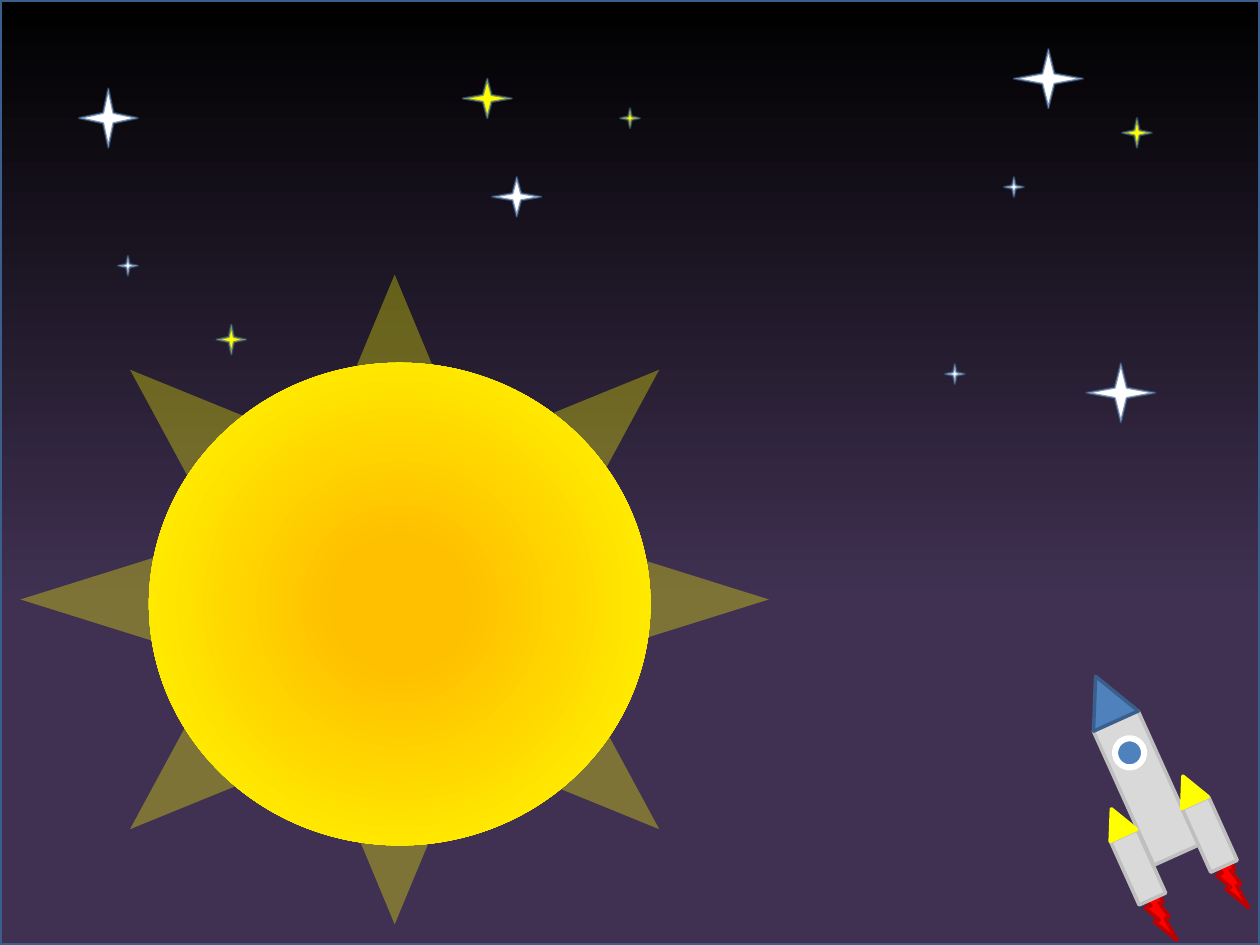
from lxml import etree
from pptx import Presentation
from pptx.dml.color import RGBColor
from pptx.enum import shapes
from pptx.oxml import ns
from pptx.util import Pt

MSO = shapes.MSO_SHAPE
NIGHT = RGBColor(0x40, 0x31, 0x52)
BLACK = RGBColor(0, 0, 0)
WHITE = RGBColor(0xFF, 0xFF, 0xFF)
YELLOW = RGBColor(0xFF, 0xFF, 0)
ORANGE = RGBColor(0xFF, 0xC0, 0)
RED = RGBColor(0xFF, 0, 0)
DARK_RED = RGBColor(0xC0, 0, 0)
BLUE = RGBColor(0x4F, 0x81, 0xBD)
DARK_BLUE = RGBColor(0x3A, 0x5F, 0x8C)
HULL = RGBColor(0xD9, 0xD9, 0xD9)
HULL_EDGE = RGBColor(0xBF, 0xBF, 0xBF)
TILT = 335.7


def add_shape(parent, kind, box, fill=None, line=None, width=2, rotation=0):
    sp = parent.add_shape(kind, *[Pt(v) for v in box])
    sp.shadow.inherit = False
    sp.rotation = rotation
    if fill is None:
        sp.fill.background()
    else:
        sp.fill.solid()
        sp.fill.fore_color.rgb = fill
    if line is None:
        sp.line.fill.background()
    else:
        sp.line.color.rgb = line
        sp.line.width = Pt(width)
    return sp


def set_alpha(element, percent):
    for color in element.iter(ns.qn("a:srgbClr")):
        etree.SubElement(color, ns.qn("a:alpha"), val=str(percent * 1000))


def set_gradient(sp, stops, direction):
    grad = etree.Element(ns.qn("a:gradFill"), rotWithShape="1")
    stop_list = etree.SubElement(grad, ns.qn("a:gsLst"))
    for position, color in stops:
        stop = etree.SubElement(stop_list, ns.qn("a:gs"), pos=str(position * 1000))
        etree.SubElement(stop, ns.qn("a:srgbClr"), val=str(color))
    grad.append(direction)
    spPr = sp._element.spPr
    spPr.replace(spPr.find(ns.qn("a:noFill")), grad)


def add_sky(s, x, y, w, h):
    sky = add_shape(s.shapes, MSO.RECTANGLE, (x, y, w, h), line=DARK_BLUE)
    upward = etree.Element(ns.qn("a:lin"), ang=str(270 * 60000), scaled="0")
    set_gradient(sky, [(0, NIGHT), (36, NIGHT), (100, BLACK)], upward)


def add_rocket(s, x, y):
    rocket = s.shapes.add_group_shape().shapes

    def part(kind, dx, dy, w, h, fill, line, width=2, rotation=TILT):
        add_shape(rocket, kind, (x + dx, y + dy, w, h), fill, line, width, rotation)

    def pair(kind, dx, dy, *style, **options):
        for shift_x, shift_y in ((0, 0), (40.9, -18.7)):
            part(kind, dx + shift_x, dy + shift_y, *style, **options)

    pair(MSO.LIGHTNING_BOLT, 30.2, 121.7, 26.6, 28.8, RED, DARK_RED, rotation=7.6)
    part(MSO.RECTANGLE, 23, 23, 28.1, 84.2, HULL, HULL_EDGE)
    pair(MSO.RECTANGLE, 24.3, 90.7, 16.6, 39.6, HULL, HULL_EDGE)
    pair(MSO.ISOSCELES_TRIANGLE, 12.4, 76.3, 16.6, 16.6, YELLOW, YELLOW)
    part(MSO.OVAL, 19.4, 36.7, 16.6, 16.6, BLUE, WHITE, 3.5)
    part(MSO.ISOSCELES_TRIANGLE, 0, 0, 28.1, 28.1, BLUE, DARK_BLUE)


def add_sun(s, x, y, w, h):
    sun = s.shapes.add_group_shape().shapes
    rays = add_shape(sun, MSO.SUN, (x, y, w, h), YELLOW)
    rays.adjustments[0] = 0.248
    set_alpha(rays._element.spPr, 32)
    disc = add_shape(sun, MSO.OVAL, (x + 73.4, y + 50.4, 286.6, 275.8))
    outward = etree.Element(ns.qn("a:path"), {"path": "circle"})
    etree.SubElement(outward, ns.qn("a:fillToRect"), dict.fromkeys("ltrb", "50000"))
    set_gradient(disc, [(18, ORANGE), (100, YELLOW), (100, YELLOW)], outward)


def add_stars(s, x, y):
    tiny, small, wide = (11.25, 11.25), (16.9, 16.9), (28.1, 22.5)
    big, large = (33.75, 33.75), (39.4, 33.75)
    stars = [
        (45, 50.6, big, WHITE),
        (123.75, 185.6, small, YELLOW),
        (67.5, 146.25, tiny, WHITE),
        (281.25, 101.25, wide, WHITE),
        (579.4, 28.1, large, WHITE),
        (573.75, 101.25, tiny, WHITE),
        (540, 208.1, tiny, WHITE),
        (264.4, 45, wide, YELLOW),
        (354.4, 61.9, tiny, YELLOW),
        (641.25, 67.5, small, YELLOW),
        (620.8, 207.6, large, WHITE),
    ]
    for dx, dy, size, color in stars:
        star = add_shape(s.shapes, MSO.STAR_4_POINT, (x + dx, y + dy, *size),
                         color, DARK_BLUE, 1.25)
        set_alpha(star._element.spPr.find(ns.qn("a:ln")), 62)


def main():
    prs = Presentation()
    prs.slide_width, prs.slide_height = Pt(720), Pt(540)
    s = prs.slides.add_slide(prs.slide_layouts[6])
    add_sky(s, 0, 0, 720, 540)
    add_rocket(s, 617.8, 385.2)
    add_sun(s, 11.7, 156.9, 427.7, 371.3)
    add_stars(s, 0, 0)
    prs.save("out.pptx")


if __name__ == "__main__":
    main()
